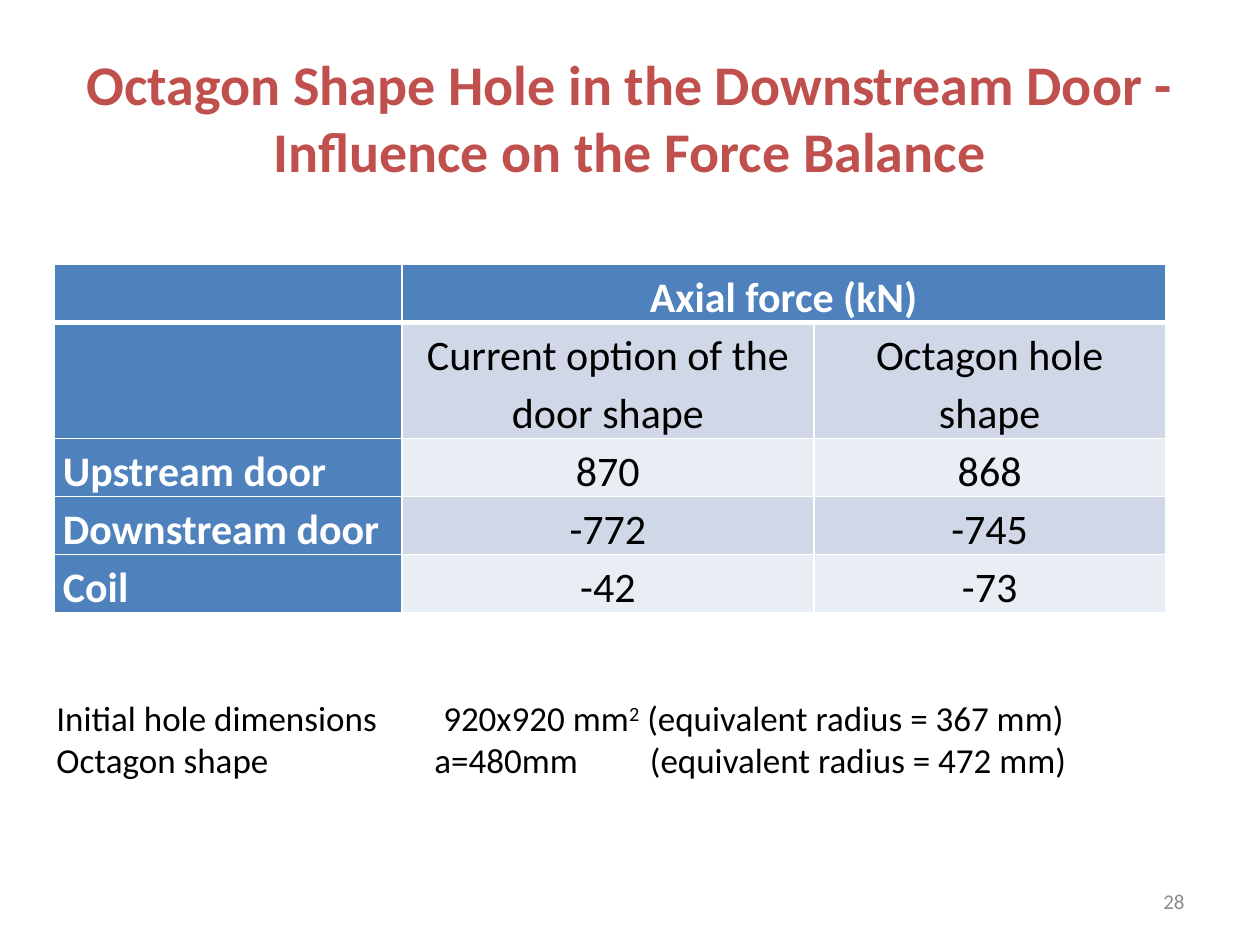
from pptx import Presentation
from pptx.dml.color import RGBColor
from pptx.enum import text as t
from pptx.oxml import parse_xml
from pptx.oxml.ns import nsdecls
from pptx.util import Inches, Pt

HUES = {"title": "C0504D", "head": "4F81BD", "dark": "D0D8E8", "light": "E9EDF4",
        "white": "FFFFFF", "black": "000000", "gray": "8C8C8C"}
MID = t.PP_ALIGN.CENTER


def add_run(para, words, size, hue, bold=False):
    run = para.add_run()
    run.text = words
    run.font.name = "Calibri"
    run.font.size = Pt(size)
    run.font.bold = bold
    run.font.color.rgb = RGBColor.from_string(HUES[hue])
    return run


def add_box(left, top, width, height, anchor):
    box = slide.shapes.add_textbox(Inches(left), Inches(top), Inches(width), Inches(height))
    frame = box.text_frame
    frame.word_wrap = True
    frame.vertical_anchor = anchor
    return frame


prs = Presentation()
prs.slide_width = Inches(10)
prs.slide_height = Inches(7.5)
slide = prs.slides.add_slide(prs.slide_layouts[6])

title = add_box(0.5, 0.3, 9, 1.25, t.MSO_ANCHOR.MIDDLE).paragraphs[0]
title.alignment = MID
add_run(title, "Octagon Shape Hole in the Downstream Door - Influence on the Force Balance",
        32, "title", True)

rows = [
    ["", "Axial force (kN)", ""],
    ["", "Current option of the door shape", "Octagon hole shape"],
    ["Upstream door", "870", "868"],
    ["Downstream door", "-772", "-745"],
    ["Coil", "-42", "-73"],
]
widths = [2.76, 3.27, 2.79]
table = slide.shapes.add_table(len(rows), len(widths), Inches(0.43), Inches(2.1),
                               Inches(sum(widths)), Inches(2.76)).table
for col, width in zip(table.columns, widths):
    col.width = Inches(width)
for r, row in enumerate(rows):
    table.rows[r].height = Inches(0.92 if r == 1 else 0.46)
    for c, words in enumerate(row):
        cell = table.cell(r, c)
        props = cell._tc.get_or_add_tcPr()
        for side in "LRTB":
            thick = (r, side) in [(0, "B"), (1, "T")]
            props.append(parse_xml(
                f'<a:ln{side} {nsdecls("a")} w="{Pt(3 if thick else 1)}"><a:solidFill>'
                f'<a:srgbClr val="{HUES["white"]}"/></a:solidFill></a:ln{side}>'))
        head = r == 0 or c == 0
        fill = "head" if head else "dark" if r % 2 else "light"
        cell.fill.solid()
        cell.fill.fore_color.rgb = RGBColor.from_string(HUES[fill])
        if words:
            cell.margin_left = cell.margin_right = Inches(0.07)
            cell.margin_top = cell.margin_bottom = 0
            para = cell.text_frame.paragraphs[0]
            para.line_spacing = 1.15
            para.alignment = MID if c else t.PP_ALIGN.LEFT
            add_run(para, words, 24, "white" if head else "black", head)
table.cell(0, 1).merge(table.cell(0, 2))

notes = add_box(0.35, 5.48, 8.74, 0.77, t.MSO_ANCHOR.TOP)
lines = [
    ([3.07], ["Initial hole dimensions\t920x920 mm", "2", " (equivalent radius = 367 mm)"]),
    ([3, 4.71], ["Octagon shape\ta=480mm\t(equivalent radius = 472 mm)"]),
]
for i, (stops, parts) in enumerate(lines):
    para = notes.add_paragraph() if i else notes.paragraphs[0]
    tabs = "".join(f'<a:tab pos="{Inches(stop)}" algn="l"/>' for stop in stops)
    para._p.get_or_add_pPr().append(parse_xml(f'<a:tabLst {nsdecls("a")}>{tabs}</a:tabLst>'))
    for part in parts:
        run = add_run(para, part, 20, "black")
        if part == "2":
            run._r.get_or_add_rPr().set("baseline", "30000")

page = add_box(7.17, 6.95, 2.33, 0.4, t.MSO_ANCHOR.MIDDLE).paragraphs[0]
page.alignment = t.PP_ALIGN.RIGHT
add_run(page, "28", 12, "gray")

prs.save("out.pptx")
